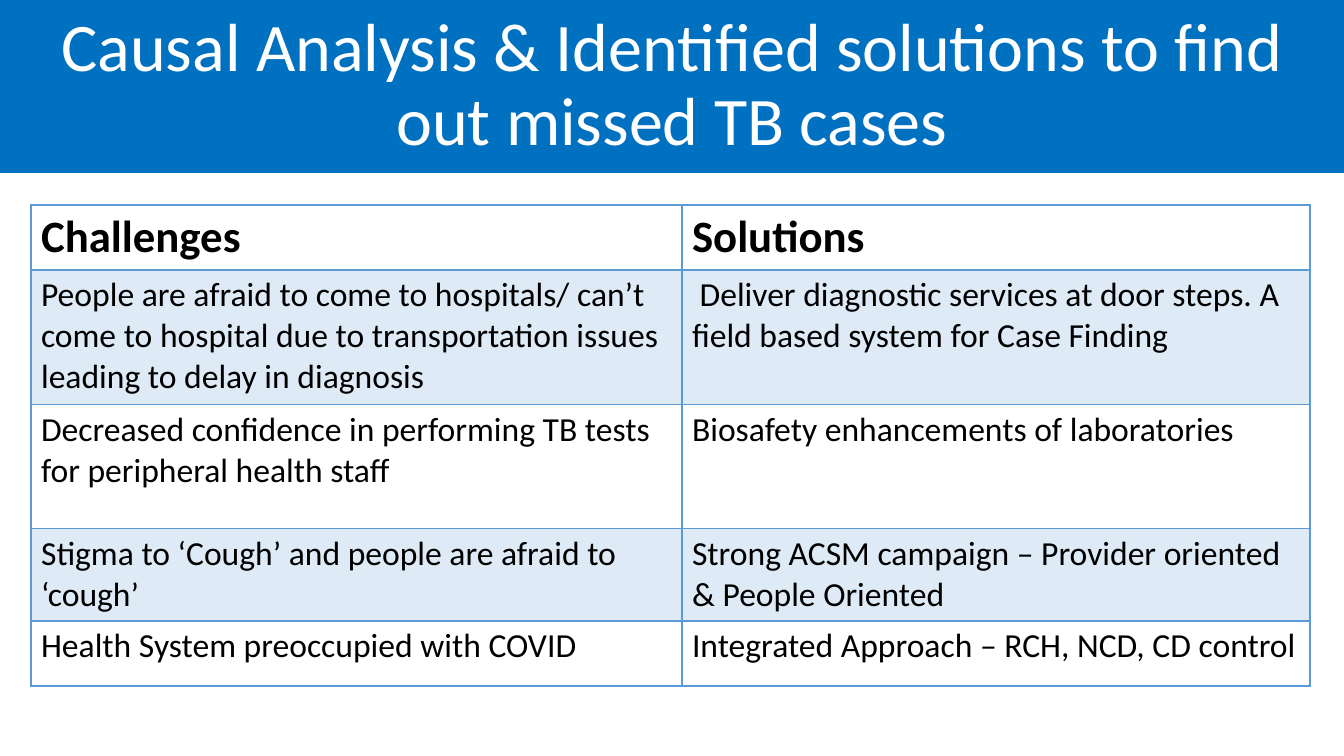
"""Build a slide that pairs TB case finding challenges with solutions."""
from lxml.etree import SubElement as Sub
from pptx import Presentation
from pptx.dml.color import RGBColor as RGB
from pptx.enum.shapes import MSO_SHAPE as Shape
from pptx.enum.text import MSO_ANCHOR as Anchor, PP_ALIGN as Align
from pptx.oxml.ns import qn
from pptx.util import Emu, Pt

COLORS = {"band": "0070C0", "title": "FFFFFF", "text": "000000",
          "line": "5B9BD5", "tint": "DEEBF7"}
ROWS = [
    ("Challenges", "Solutions"),
    ("People are afraid to come to hospitals/ can’t come to hospital due to "
     "transportation issues leading to delay in diagnosis",
     " Deliver diagnostic services at door steps. A field based system for Case Finding"),
    ("Decreased confidence in performing TB tests for peripheral health staff",
     "Biosafety enhancements of laboratories"),
    ("Stigma to ‘Cough’ and people are afraid to ‘cough’",
     "Strong ACSM campaign – Provider oriented & People Oriented"),
    ("Health System preoccupied with COVID",
     "Integrated Approach – RCH, NCD, CD control"),
]
WIDTHS = [651, 628]
HEIGHTS = [64, 135, 124, 92, 65]


def px(n):
    return Emu(round(n * 914400 / 100.8))


def style(para, size, color, bold=False):
    font = para.font
    font.name, font.size, font.bold = "Calibri", Pt(size), bold
    font.color.rgb = RGB.from_string(COLORS[color])


deck = Presentation()
deck.slide_width, deck.slide_height = px(1344), px(756)
slide = deck.slides.add_slide(deck.slide_layouts[6])

band = slide.shapes.add_shape(Shape.RECTANGLE, 0, 0, px(1344), px(173))
band.shadow.inherit = False
band.fill.solid()
band.fill.fore_color.rgb = RGB.from_string(COLORS["band"])
band.line.fill.background()
frame = band.text_frame
frame.word_wrap = True
frame.vertical_anchor = Anchor.MIDDLE
title = frame.paragraphs[0]
title.text = "Causal Analysis & Identified solutions to find out missed TB cases"
title.alignment = Align.CENTER
title.line_spacing = 0.9
style(title, 48.6, "title")

grid = slide.shapes.add_table(len(ROWS), len(WIDTHS), px(31), px(205),
                              px(sum(WIDTHS)), px(sum(HEIGHTS)))
table = grid.table
table.horz_banding = False
for col, width in zip(table.columns, WIDTHS):
    col.width = px(width)

for i, (row, height, texts) in enumerate(zip(table.rows, HEIGHTS, ROWS)):
    row.height = px(height)
    head = i == 0
    for cell, text in zip(row.cells, texts):
        para = cell.text_frame.paragraphs[0]
        para.text = text
        style(para, 32 if head else 24, "text", head)
        props = cell._tc.get_or_add_tcPr()
        for side in "LRTB":
            thick = (head and side == "B") or (i == 1 and side == "T")
            line = Sub(props, qn(f"a:ln{side}"), w=str(Pt(2 if thick else 1)))
            Sub(Sub(line, qn("a:solidFill")), qn("a:srgbClr"), val=COLORS["line"])
        if i % 2:
            cell.fill.solid()
            cell.fill.fore_color.rgb = RGB.from_string(COLORS["tint"])
        else:
            cell.fill.background()

deck.save("out.pptx")
